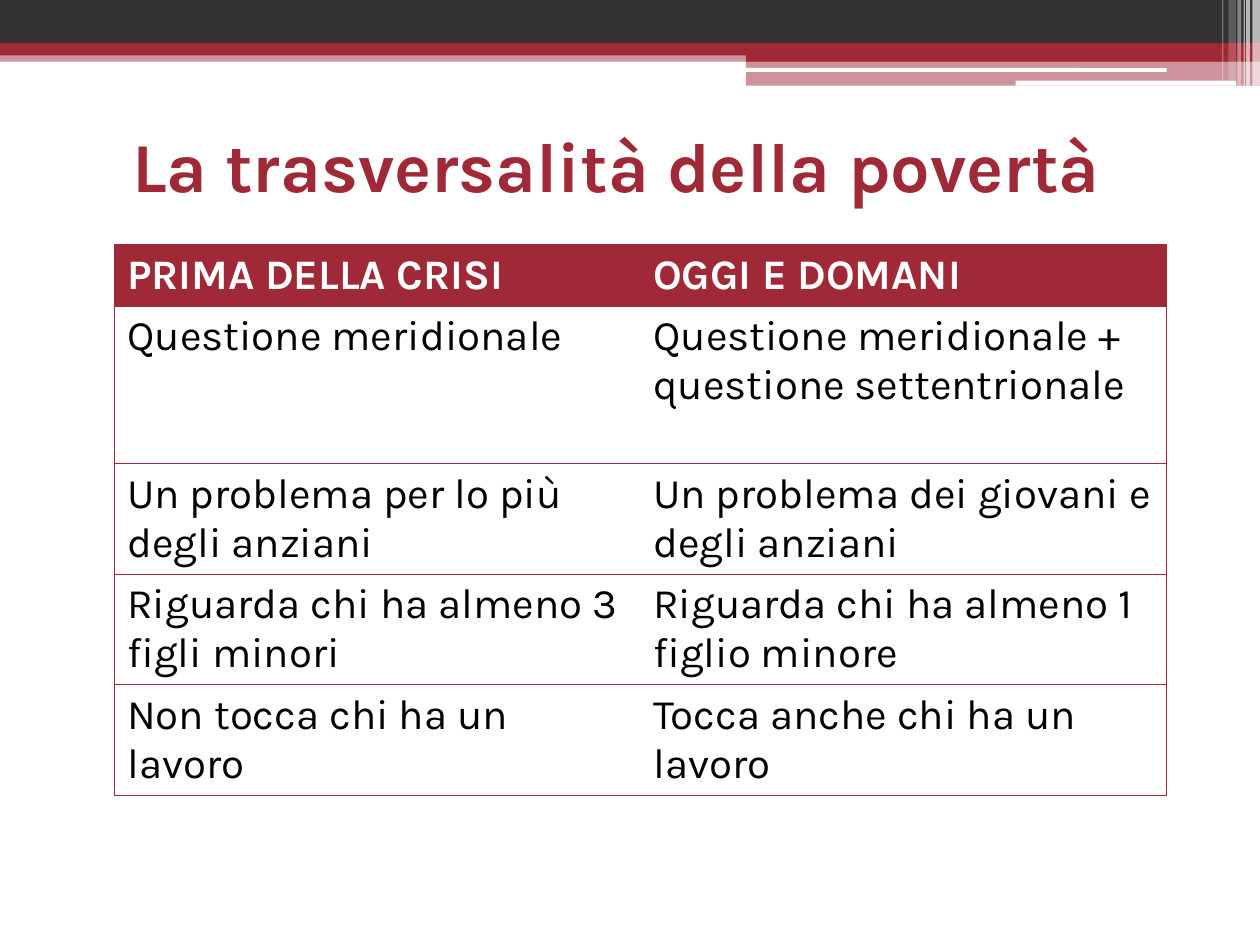
from lxml.etree import SubElement as Sub
from pptx import Presentation
from pptx.dml.color import RGBColor as RGB
from pptx.enum.shapes import MSO_SHAPE as Kind
from pptx.enum.text import MSO_ANCHOR as Anchor, PP_ALIGN as Align
from pptx.oxml.ns import qn
from pptx.util import Inches, Pt

RED, DARK, WHITE, BLACK = "9F2936", "323232", "FFFFFF", "000000"
FONT = "Karla"
BANDS = [
    (0, 0.4, 10, 0.09, RED, 50),
    (0, 0, 10, 0.34, DARK, 100),
    (0, 0.34, 10, 0.1, RED, 100),
    (5.92, 0.39, 4.08, 0.1, RED, 100),
    (5.92, 0.48, 4.08, 0.2, RED, 50),
]
PILLS = [(5.91, 0.54, 3.35, 0.03), (8.06, 0.64, 1.75, 0.04)]
STRIPES = [
    (9.94, 0.06, 0.68, 65),
    (9.89, 0.03, 0.68, 65),
    (9.87, 0.01, 0.68, 60),
    (9.82, 0.03, 0.68, 40),
    (9.75, 0.06, 0.64, 20),
    (9.7, 0.01, 0.64, 30),
]
ROWS = [
    ("PRIMA DELLA CRISI", "OGGI E DOMANI"),
    ("Questione meridionale", "Questione meridionale + questione settentrionale"),
    ("Un problema per lo più degli anziani", "Un problema dei giovani e degli anziani"),
    ("Riguarda chi ha almeno 3 figli minori", "Riguarda chi ha almeno 1 figlio minore"),
    ("Non tocca chi ha un lavoro", "Tocca anche chi ha un lavoro"),
]
HEIGHTS = [0.48, 1.25, 0.87, 0.87, 0.87]


def paint(fill, color, alpha=100):
    """Fill with a solid colour at the given percent of opacity."""
    fill.solid()
    fill.fore_color.rgb = RGB.from_string(color)
    if alpha < 100:
        tone = fill._xPr.find(".//" + qn("a:srgbClr"))
        Sub(tone, qn("a:alpha"), val=str(alpha * 1000))


def add_bar(slide, x, y, w, h, color, alpha=100, kind=Kind.RECTANGLE):
    """Add a bar without outline or shadow."""
    bar = slide.shapes.add_shape(kind, Inches(x), Inches(y), Inches(w), Inches(h))
    bar.shadow.inherit = False
    bar.line.fill.background()
    paint(bar.fill, color, alpha)


def write(frame, text, size, color, bold):
    """Put one formatted paragraph in a text frame."""
    frame.text = text
    font = frame.paragraphs[0].runs[0].font
    font.name, font.size, font.bold = FONT, Pt(size), bold
    font.color.rgb = RGB.from_string(color)


def add_title(slide, text):
    """Add the centred slide title."""
    box = slide.shapes.add_textbox(Inches(0.67), Inches(0.92), Inches(8.58), Inches(0.77))
    frame = box.text_frame
    frame.word_wrap = True
    frame.vertical_anchor = Anchor.MIDDLE
    write(frame, text, 40, RED, True)
    frame.paragraphs[0].alignment = Align.CENTER


def set_edges(cell, sides):
    """Draw thin red borders on the given sides and none on the others."""
    props = cell._tc.get_or_add_tcPr()
    for side in "LRTB":
        line = Sub(props, qn("a:ln" + side), w=str(Pt(0.75)))
        if side in sides:
            fill = Sub(line, qn("a:solidFill"))
            Sub(fill, qn("a:srgbClr"), val=RED)
        else:
            Sub(line, qn("a:noFill"))


def add_grid(slide):
    """Add the two-column comparison table."""
    shape = slide.shapes.add_table(
        len(ROWS), 2, Inches(0.91), Inches(1.94), Inches(8.35), Inches(sum(HEIGHTS)))
    grid = shape.table
    for row, (high, texts) in enumerate(zip(HEIGHTS, ROWS)):
        grid.rows[row].height = Inches(high)
        head = row == 0
        for col, text in enumerate(texts):
            cell = grid.cell(row, col)
            write(cell.text_frame, text, 24, WHITE if head else BLACK, head)
            set_edges(cell, "TB" + "LR"[col])
            if head:
                paint(cell.fill, RED)
            else:
                cell.fill.background()


def main():
    """Build and save the slide."""
    deck = Presentation()
    deck.slide_width, deck.slide_height = Inches(10), Inches(7.5)
    slide = deck.slides.add_slide(deck.slide_layouts[6])
    for band in BANDS:
        add_bar(slide, *band)
    for pill in PILLS:
        add_bar(slide, *pill, WHITE, kind=Kind.ROUNDED_RECTANGLE)
    for x, w, h, alpha in STRIPES:
        add_bar(slide, x, 0, w, h, WHITE, alpha)
    add_grid(slide)
    add_title(slide, "La trasversalità della povertà ")
    deck.save("out.pptx")


if __name__ == "__main__":
    main()
